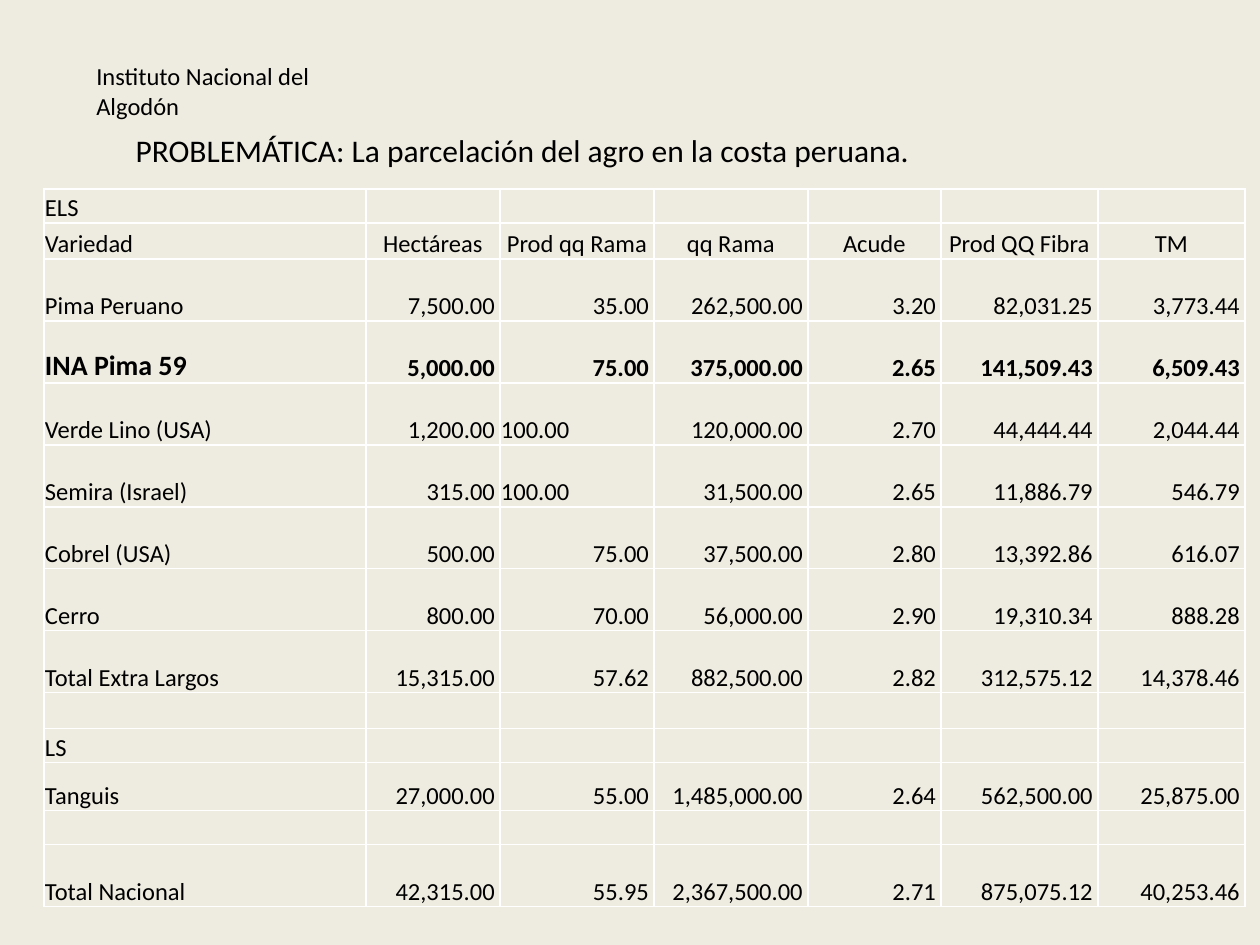
from lxml import etree
from pptx import Presentation
from pptx.dml.color import RGBColor
from pptx.enum.text import MSO_ANCHOR, MSO_AUTO_SIZE, PP_ALIGN
from pptx.oxml.ns import qn
from pptx.util import Pt

PX = 914400 // 126
BACKGROUND = RGBColor(0xEE, 0xEC, 0xE1)
BORDER = RGBColor(0xFF, 0xFF, 0xFF)
INK = RGBColor(0, 0, 0)
FONT = "Calibri"

INSTITUTE = "Instituto Nacional del Algodón"
TITLE = "PROBLEMÁTICA: La parcelación del agro en la costa peruana."
ROWS = [  # height in px, cell texts
    (34, ["ELS"]),
    (36, ["Variedad", "Hectáreas", "Prod qq Rama", "qq Rama", "Acude", "Prod QQ Fibra", "TM"]),
    (62, ["Pima Peruano", "7,500.00", "35.00", "262,500.00", "3.20", "82,031.25", "3,773.44"]),
    (62, ["INA Pima 59", "5,000.00", "75.00", "375,000.00", "2.65", "141,509.43", "6,509.43"]),
    (62, ["Verde Lino (USA)", "1,200.00", "100.00", "120,000.00", "2.70", "44,444.44", "2,044.44"]),
    (62, ["Semira (Israel)", "315.00", "100.00", "31,500.00", "2.65", "11,886.79", "546.79"]),
    (62, ["Cobrel (USA)", "500.00", "75.00", "37,500.00", "2.80", "13,392.86", "616.07"]),
    (62, ["Cerro", "800.00", "70.00", "56,000.00", "2.90", "19,310.34", "888.28"]),
    (62, ["Total Extra Largos", "15,315.00", "57.62", "882,500.00", "2.82", "312,575.12", "14,378.46"]),
    (36, []),
    (34, ["LS"]),
    (48, ["Tanguis", "27,000.00", "55.00", "1,485,000.00", "2.64", "562,500.00", "25,875.00"]),
    (34, []),
    (62, ["Total Nacional", "42,315.00", "55.95", "2,367,500.00", "2.71", "875,075.12", "40,253.46"]),
]
COLUMN_WIDTHS = [322, 134, 154, 154, 133, 157, 147]
HEADER_ROW, BOLD_ROW = 1, 3
LEFT_ALIGNED_VALUE = "100.00"


def add_run(p, text, size, bold=False):
    r = p.add_run()
    r.text = text
    r.font.name, r.font.size, r.font.bold = FONT, Pt(size), bold
    r.font.color.rgb = INK


def add_borders(cell):
    tcPr = cell._tc.get_or_add_tcPr()
    for i, side in enumerate(("lnL", "lnR", "lnT", "lnB")):
        ln = etree.Element(qn(f"a:{side}"), w=str(Pt(1)))
        fill = etree.SubElement(ln, qn("a:solidFill"))
        etree.SubElement(fill, qn("a:srgbClr"), val=str(BORDER))
        tcPr.insert(i, ln)


def cell_alignment(row, col, text):
    if col == 0 or text == LEFT_ALIGNED_VALUE:
        return PP_ALIGN.LEFT
    return PP_ALIGN.CENTER if row == HEADER_ROW else PP_ALIGN.RIGHT


def fill_cell(cell, row, col, text):
    cell.fill.solid()
    cell.fill.fore_color.rgb = BACKGROUND
    add_borders(cell)
    cell.vertical_anchor = MSO_ANCHOR.BOTTOM
    cell.margin_left = cell.margin_top = PX
    cell.margin_bottom = 0
    p = cell.text_frame.paragraphs[0]
    p.alignment = cell_alignment(row, col, text)
    cell.margin_right = 5 * PX if p.alignment == PP_ALIGN.RIGHT else PX
    if text:
        bold = row == BOLD_ROW
        add_run(p, text, 16 if bold and col == 0 else 14, bold)
    else:
        etree.SubElement(p._p, qn("a:endParaRPr"), sz="1400")


prs = Presentation()
prs.slide_width, prs.slide_height = 1260 * PX, 945 * PX
s = prs.slides.add_slide(prs.slide_layouts[5])
s.background.fill.solid()
s.background.fill.fore_color.rgb = BACKGROUND

box = s.shapes.add_textbox(84 * PX, 55 * PX, 326 * PX, 43 * PX)
box.text_frame.word_wrap = False
add_run(box.text_frame.paragraphs[0], INSTITUTE, 14)

title = s.shapes.title
title.left, title.top, title.width, title.height = (v * PX for v in (123, 125, 883, 127))
tf = title.text_frame
tf.word_wrap = True
tf.auto_size = MSO_AUTO_SIZE.NONE
tf.vertical_anchor = MSO_ANCHOR.TOP
tf.paragraphs[0].alignment = PP_ALIGN.LEFT
add_run(tf.paragraphs[0], TITLE, 18)

table = s.shapes.add_table(
    len(ROWS), len(COLUMN_WIDTHS), 44 * PX, 189 * PX,
    sum(COLUMN_WIDTHS) * PX, sum(h for h, _ in ROWS) * PX).table
table.first_row = table.horz_banding = False
for column, width in zip(table.columns, COLUMN_WIDTHS):
    column.width = width * PX
for row, (height, texts) in enumerate(ROWS):
    table.rows[row].height = height * PX
    for col in range(len(COLUMN_WIDTHS)):
        fill_cell(table.cell(row, col), row, col, texts[col] if col < len(texts) else "")

prs.save("out.pptx")
